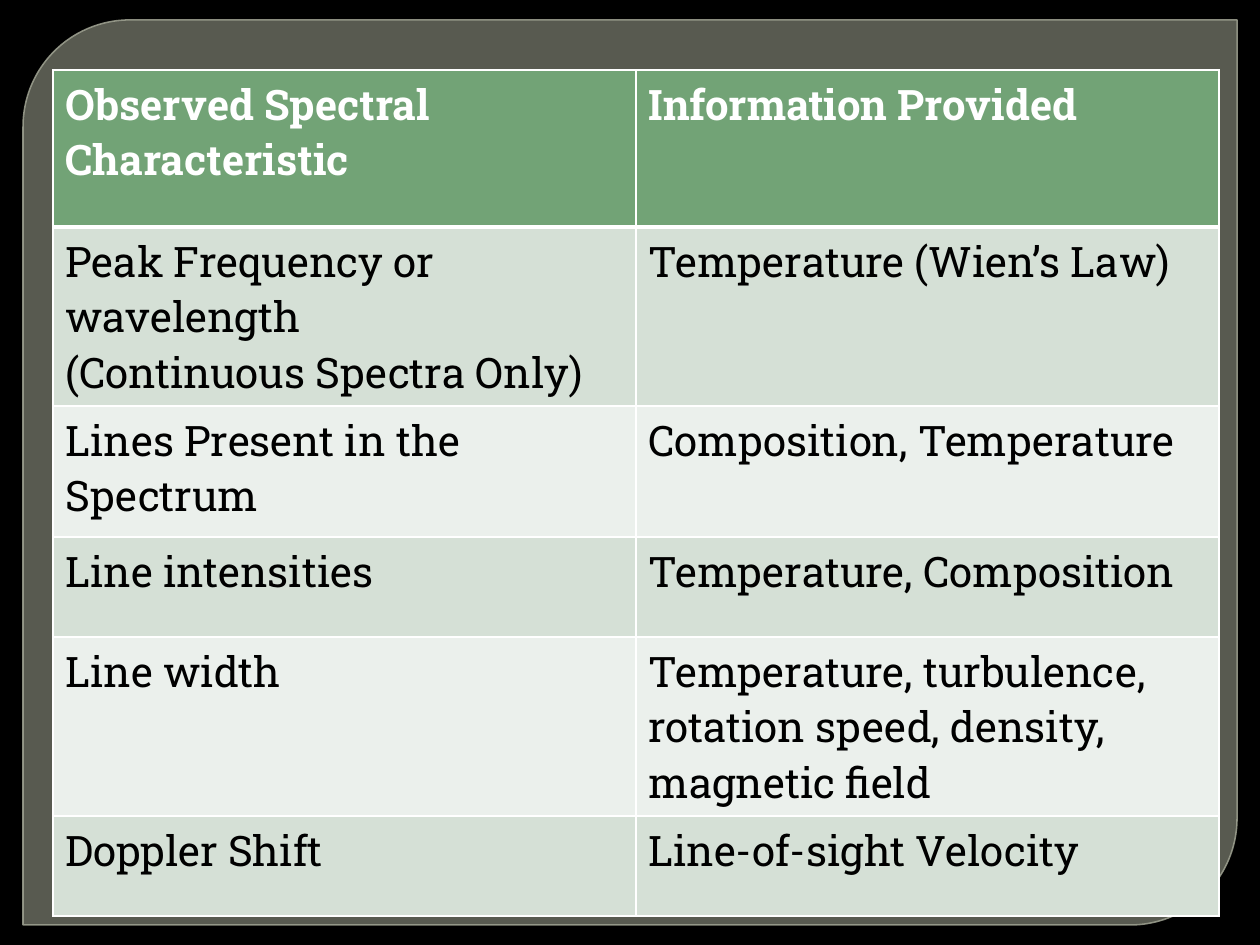
from lxml.etree import SubElement
from pptx import Presentation
from pptx.dml.color import RGBColor
from pptx.enum.shapes import MSO_SHAPE
from pptx.oxml.ns import qn
from pptx.util import Pt

EMU_PER_PX = 914400 / 126
COLORS = {
    "background": "000000",
    "panel": "888B7B",
    "panel_edge": "9DA090",
    "header": "72A376",
    "band_dark": "D5E0D6",
    "band_light": "EBF0EC",
    "border": "FFFFFF",
    "header_text": "FFFFFF",
    "body_text": "000000",
}
HEADER_FONT = {"name": "Roboto Slab", "size": Pt(24), "bold": True}
BODY_FONT = {**HEADER_FONT, "bold": False}
ROWS = [
    ("Observed Spectral Characteristic", "Information Provided"),
    ("Peak Frequency or wavelength\n(Continuous Spectra Only)", "Temperature (Wien’s Law)"),
    ("Lines Present in the Spectrum", "Composition, Temperature"),
    ("Line intensities", "Temperature, Composition"),
    ("Line width", "Temperature, turbulence, rotation speed, density, magnetic field"),
    ("Doppler Shift", "Line-of-sight Velocity"),
]
ROW_HEIGHTS = [157, 170, 131, 100, 150, 100]
COLUMN_WIDTH = 583


def px(length):
    return round(length * EMU_PER_PX)


def paint(fill, color, opacity=100):
    fill.solid()
    fill.fore_color.rgb = RGBColor.from_string(COLORS[color])
    if opacity < 100:
        tint = fill._xPr.find(qn("a:solidFill"))[0]
        SubElement(tint, qn("a:alpha"), val=str(opacity * 1000))


def add_panel(slide):
    panel = slide.shapes.add_shape(
        MSO_SHAPE.ROUND_2_DIAG_RECTANGLE, px(23), px(20), px(1214), px(905))
    panel.shadow.inherit = False
    panel.adjustments[0] = 0.118
    panel.adjustments[1] = 0
    paint(panel.fill, "panel", 65)
    paint(panel.line.fill, "panel_edge", 88)
    panel.line.width = Pt(0.87)


def add_border(cell, side, width):
    edge = SubElement(cell._tc.get_or_add_tcPr(), qn(f"a:ln{side}"), w=str(Pt(width)))
    ink = SubElement(edge, qn("a:solidFill"))
    SubElement(ink, qn("a:srgbClr"), val=COLORS["border"])


def style_cell(cell, wording, row):
    is_header = row == 0
    widths = {"L": 1, "R": 1, "T": 3 if row == 1 else 1, "B": 3 if is_header else 1}
    for side, width in widths.items():
        add_border(cell, side, width)
    band = "band_dark" if row % 2 else "band_light"
    paint(cell.fill, "header" if is_header else band)
    cell.text = wording
    for paragraph in cell.text_frame.paragraphs:
        font = paragraph.runs[0].font
        for attribute, value in (HEADER_FONT if is_header else BODY_FONT).items():
            setattr(font, attribute, value)
        ink = "header_text" if is_header else "body_text"
        font.color.rgb = RGBColor.from_string(COLORS[ink])


def add_spectra_table(slide):
    column_count = len(ROWS[0])
    table = slide.shapes.add_table(
        len(ROWS), column_count, px(53), px(70),
        px(COLUMN_WIDTH * column_count), px(sum(ROW_HEIGHTS))).table
    for column in table.columns:
        column.width = px(COLUMN_WIDTH)
    for row, (height, wordings) in enumerate(zip(ROW_HEIGHTS, ROWS)):
        table.rows[row].height = px(height)
        for column, wording in enumerate(wordings):
            style_cell(table.cell(row, column), wording, row)


def main():
    deck = Presentation()
    deck.slide_width, deck.slide_height = px(1260), px(945)
    slide = deck.slides.add_slide(deck.slide_layouts[6])
    paint(slide.background.fill, "background")
    add_panel(slide)
    add_spectra_table(slide)
    deck.save("out.pptx")


if __name__ == "__main__":
    main()
